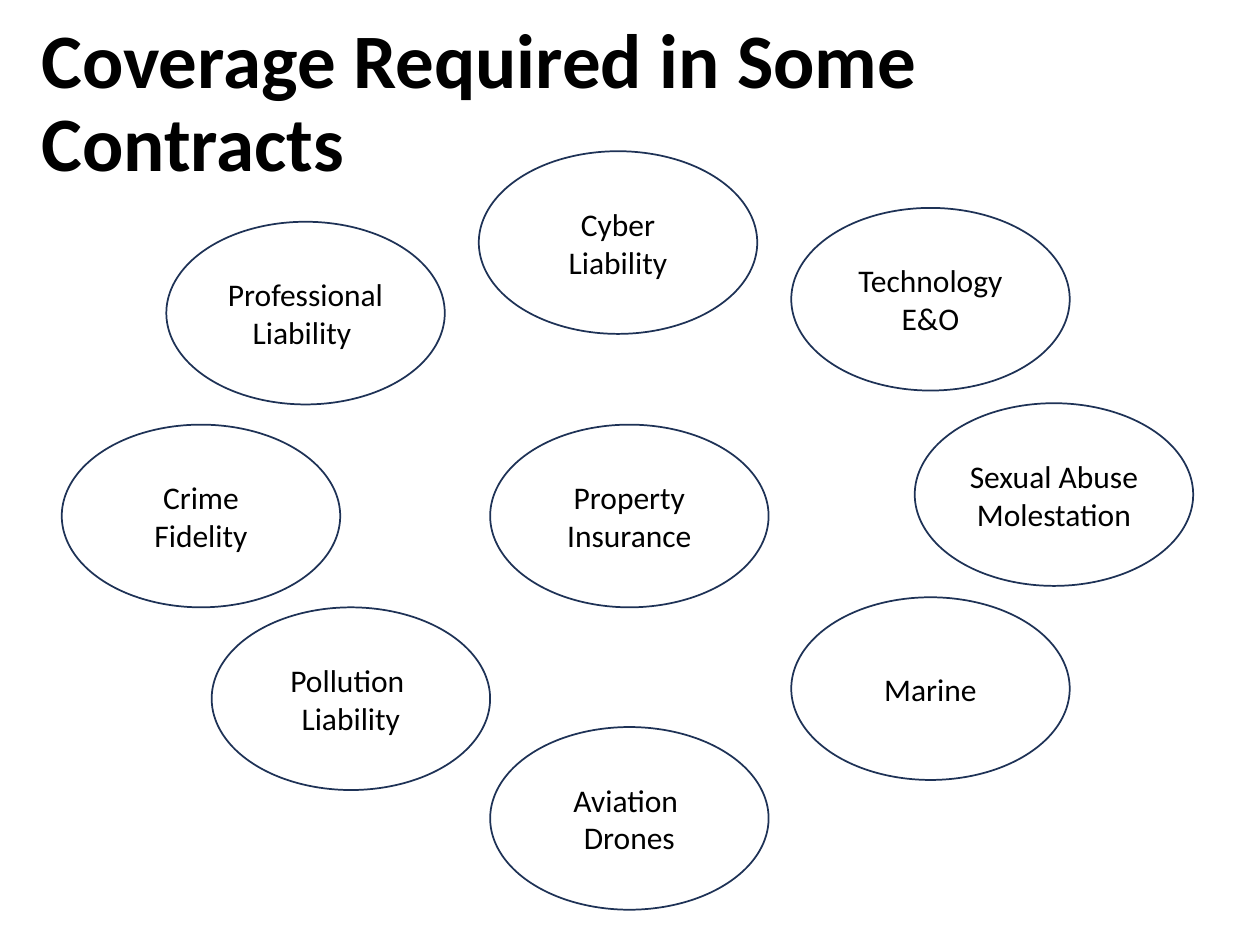
from pptx import Presentation
from pptx.dml.color import RGBColor
from pptx.enum.shapes import MSO_SHAPE
from pptx.enum.text import MSO_ANCHOR, PP_ALIGN
from pptx.util import Inches, Pt

OVAL = MSO_SHAPE.OVAL
MIDDLE = MSO_ANCHOR.MIDDLE
CENTER = PP_ALIGN.CENTER
LEFT = PP_ALIGN.LEFT

FONT, BLACK, WHITE, NAVY = "Calibri", "000000", "FFFFFF", "1E3256"
TITLE = "Coverage Required in Some Contracts"
TITLE_BOX = (0.23, 0.11, 9.53, 1.45)
OVAL_SIZE = (2.21, 1.45)
MID_X, RIGHT_X, MID_Y = 3.89, 6.28, 3.37
COVERAGES = [
    ("Professional Liability ", 1.32, 1.76),
    ("Cyber Liability", 3.8, 1.2),
    ("Technology E&O", RIGHT_X, 1.65),
    ("Property Insurance", MID_X, MID_Y),
    ("Crime\nFidelity", 0.49, MID_Y),
    ("Pollution \nLiability", MID_X - OVAL_SIZE[0], MID_Y + OVAL_SIZE[1]),
    ("Aviation \nDrones", MID_X, 5.77),
    ("Marine", RIGHT_X, 4.74),
    ("Sexual Abuse Molestation", 7.26, 3.2),
]


def rgb(value):
    """Turn a hex string into a colour."""
    return RGBColor.from_string(value)


def write(shape, text, size, align, bold=False, spacing=1.0):
    """Put styled, vertically centred text into a shape."""
    tf = shape.text_frame
    tf.word_wrap = True
    tf.vertical_anchor = MIDDLE
    tf.text = text
    for p in tf.paragraphs:
        p.alignment = align
        p.line_spacing = spacing
        for r in p.runs:
            r.font.name = FONT
            r.font.size = Pt(size)
            r.font.bold = bold
            r.font.color.rgb = rgb(BLACK)


def add_coverage(s, text, left, top):
    """Draw one outlined oval naming a coverage."""
    sp = s.shapes.add_shape(OVAL, *map(Inches, (left, top, *OVAL_SIZE)))
    sp.shadow.inherit = False
    sp.fill.solid()
    sp.fill.fore_color.rgb = rgb(WHITE)
    sp.line.color.rgb = rgb(NAVY)
    sp.line.width = Pt(1)
    write(sp, text, 18, CENTER)


def main():
    """Build the slide and save it."""
    prs = Presentation()
    prs.slide_width, prs.slide_height = Inches(10), Inches(7.5)
    s = prs.slides.add_slide(prs.slide_layouts[6])
    title = s.shapes.add_textbox(*map(Inches, TITLE_BOX))
    write(title, TITLE, 44, LEFT, bold=True, spacing=0.9)
    for coverage in COVERAGES:
        add_coverage(s, *coverage)
    prs.save("out.pptx")


if __name__ == "__main__":
    main()
